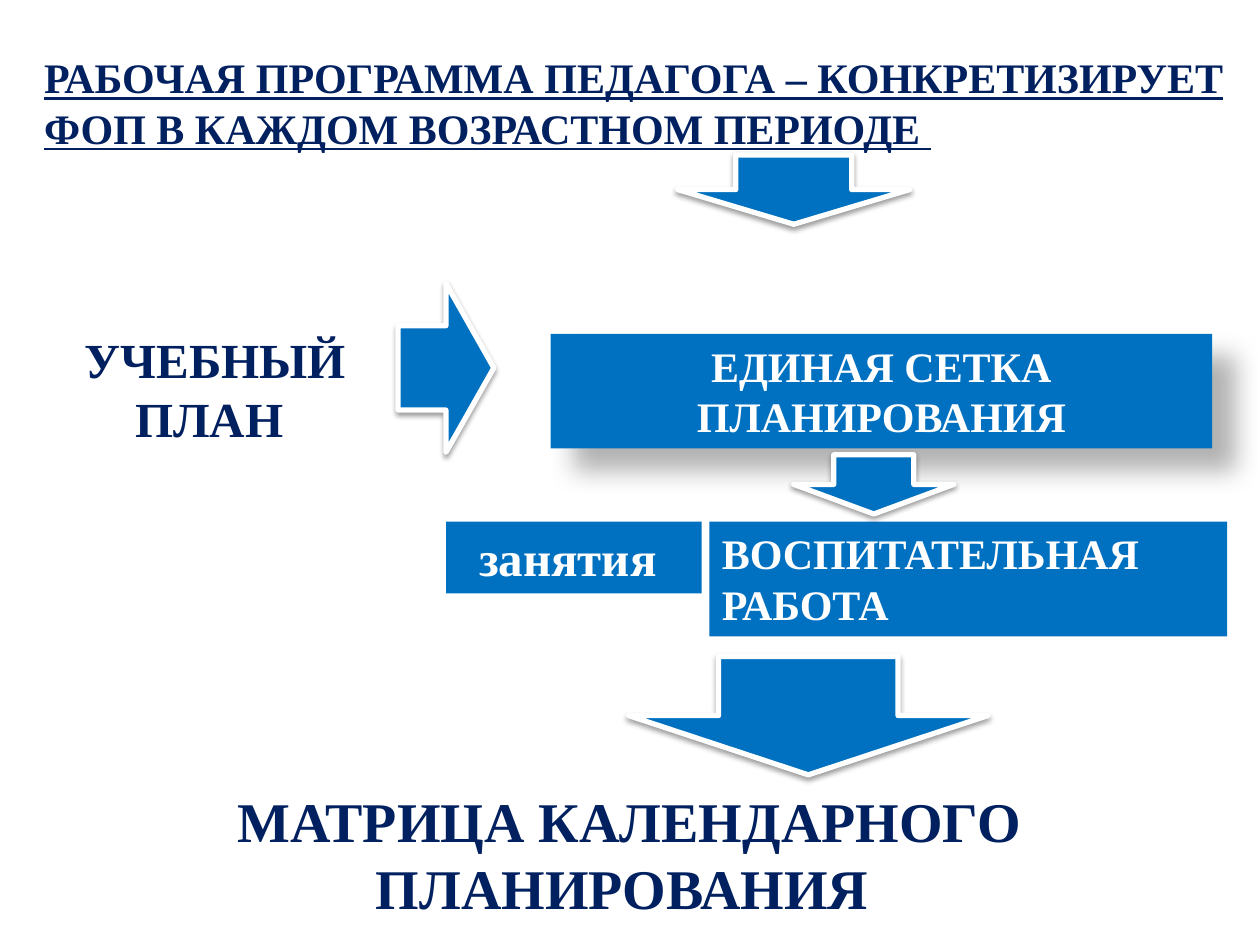
from lxml import etree
from pptx import Presentation
from pptx.dml.color import RGBColor
from pptx.enum.shapes import MSO_SHAPE
from pptx.enum.text import MSO_ANCHOR, MSO_AUTO_SIZE, PP_ALIGN
from pptx.oxml.ns import qn
from pptx.util import Inches, Pt

NAVY = RGBColor(0x00, 0x20, 0x60)
BLUE = RGBColor(0x00, 0x70, 0xC0)
WHITE = RGBColor(0xFF, 0xFF, 0xFF)
FONT = "Times New Roman"
LEFT, CENTER, JUSTIFY = PP_ALIGN.LEFT, PP_ALIGN.CENTER, PP_ALIGN.JUSTIFY
RECT = MSO_SHAPE.RECTANGLE
DOWN, RIGHT = MSO_SHAPE.DOWN_ARROW, MSO_SHAPE.RIGHT_ARROW
TOP = MSO_ANCHOR.TOP
NO_AUTOFIT = MSO_AUTO_SIZE.NONE

ARROW_SHADOW = (38, 3.1, 1.6, 90)
GRID_SHADOW = (30, 15, 18, 45)

# Boxes are left, top, width, height in inches
ARROWS = [
    (RIGHT, (3.16, 2.25, 0.76, 1.34)),
    (DOWN, (6.3, 3.61, 1.27, 0.47)),
    (DOWN, (4.99, 5.21, 2.85, 0.94)),
    (DOWN, (5.38, 1.23, 1.84, 0.55)),
]
LABELS = [
    ("УЧЕБНЫЙ ПЛАН ", 28, (0.38, 2.57, 2.66, 1.04)),
    ("МАТРИЦА КАЛЕНДАРНОГО ПЛАНИРОВАНИЯ ", 32, (0.63, 6.19, 8.73, 1.18)),
]
BLOCKS = [
    ("ЕДИНАЯ СЕТКА ПЛАНИРОВАНИЯ", 24, CENTER, (4.37, 2.65, 5.25, 0.91), GRID_SHADOW),
    ("занятия ", 28, CENTER, (3.54, 4.14, 2.03, 0.57), None),
    ("ВОСПИТАТЕЛЬНАЯ РАБОТА", 24, LEFT, (5.63, 4.14, 4.11, 0.91), None),
]


def inches(box):
    return [Inches(v) for v in box]


def set_shadow(sp, shadow):
    """Replace the theme shadow with (opacity %, blur pt, distance pt, angle)."""
    sp.shadow.inherit = False
    if shadow is None:
        return
    opacity, blur, distance, angle = shadow
    effects = sp._element.spPr.find(qn("a:effectLst"))
    outer = etree.SubElement(
        effects, qn("a:outerShdw"), blurRad=str(Pt(blur)), dist=str(Pt(distance)),
        dir=str(angle * 60000), algn="tl", rotWithShape="0")
    color = etree.SubElement(outer, qn("a:srgbClr"), val="000000")
    etree.SubElement(color, qn("a:alpha"), val=str(opacity * 1000))


def write_text(sp, text, size, color, align, underline=None):
    tf = sp.text_frame
    tf.text = text
    tf.word_wrap = True
    tf.auto_size = NO_AUTOFIT
    tf.vertical_anchor = TOP
    p = tf.paragraphs[0]
    p.alignment = align
    font = p.runs[0].font
    font.name, font.size, font.bold = FONT, Pt(size), True
    font.underline = underline
    font.color.rgb = color


def add_title(slide, box):
    title = slide.shapes.title
    title.left, title.top, title.width, title.height = inches(box)
    write_text(title, "РАБОЧАЯ ПРОГРАММА ПЕДАГОГА – КОНКРЕТИЗИРУЕТ "
               "ФОП В КАЖДОМ ВОЗРАСТНОМ ПЕРИОДЕ ", 24, NAVY, JUSTIFY, True)


def add_label(slide, text, size, box):
    write_text(slide.shapes.add_textbox(*inches(box)), text, size, NAVY, CENTER)


def add_block(slide, text, size, align, box, shadow):
    sp = slide.shapes.add_shape(RECT, *inches(box))
    sp.fill.solid()
    sp.fill.fore_color.rgb = BLUE
    sp.line.fill.background()
    set_shadow(sp, shadow)
    write_text(sp, text, size, WHITE, align)


def add_arrow(slide, kind, box):
    sp = slide.shapes.add_shape(kind, *inches(box))
    sp.fill.solid()
    sp.fill.fore_color.rgb = BLUE
    sp.line.color.rgb = WHITE
    sp.line.width = Pt(3)
    set_shadow(sp, ARROW_SHADOW)


def main():
    prs = Presentation()
    prs.slide_width, prs.slide_height = Inches(10), Inches(7.5)
    slide = prs.slides.add_slide(prs.slide_layouts[5])
    add_title(slide, (0.25, 0.36, 9.56, 0.91))
    for label in LABELS:
        add_label(slide, *label)
    for block in BLOCKS:
        add_block(slide, *block)
    for arrow in ARROWS:
        add_arrow(slide, *arrow)
    prs.save("out.pptx")


if __name__ == "__main__":
    main()
